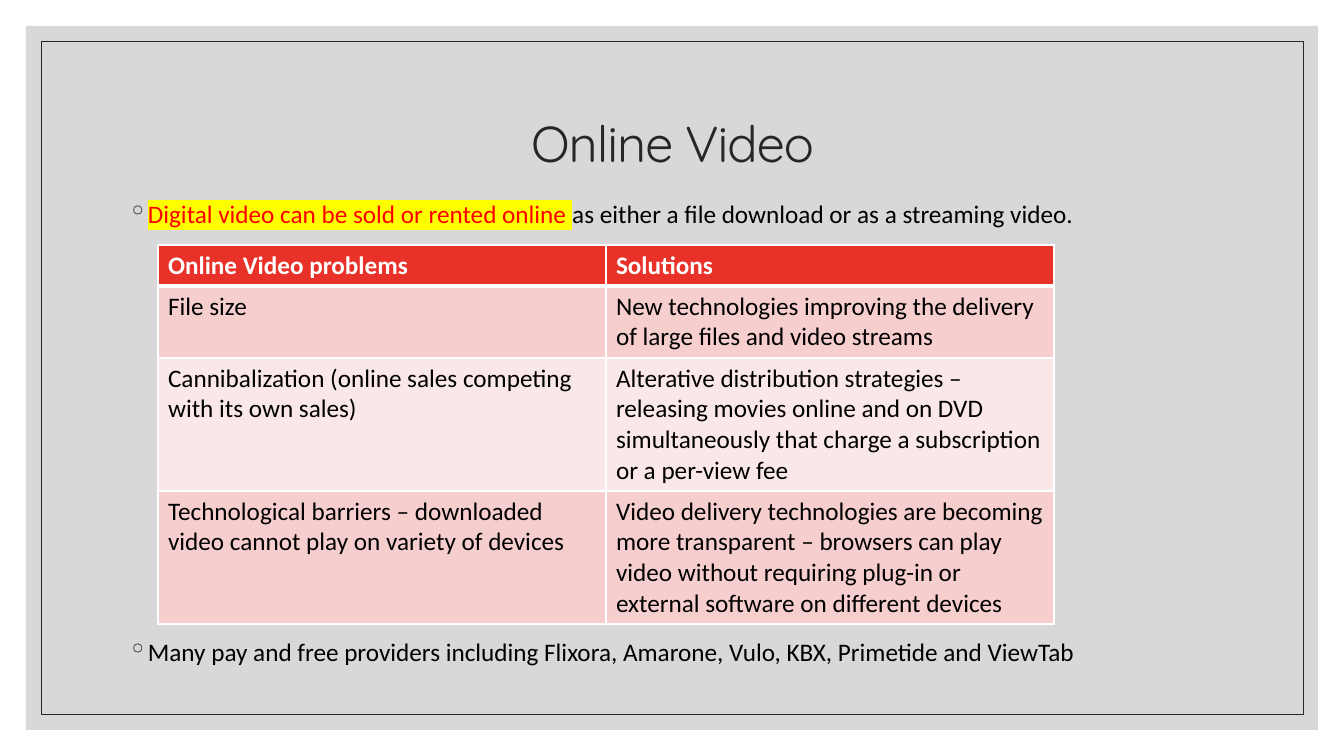
from lxml import etree
from pptx import Presentation, util as u
from pptx.dml.color import RGBColor
from pptx.enum import shapes, text
from pptx.oxml import ns

EMU_PER_PX = 914400 / 100.8
INK, BLACK, WHITE = "262626", "000000", "FFFFFF"
HEADER, BAND_DARK, BAND_LIGHT = "E73129", "F6CECD", "FAE8E8"

PROBLEMS = [
    ("Online Video problems", "Solutions"),
    ("File size",
     "New technologies improving the delivery of large files and video streams"),
    ("Cannibalization (online sales competing with its own sales)",
     "Alterative distribution strategies – releasing movies online and on DVD "
     "simultaneously that charge a subscription or a per-view fee"),
    ("Technological barriers – downloaded video cannot play on variety of devices",
     "Video delivery technologies are becoming more transparent – browsers can play "
     "video without requiring plug-in or external software on different devices"),
]
ROW_HEIGHTS = [41, 72, 133, 133]


def px(length):
    return u.Emu(round(length * EMU_PER_PX))


def rgb(color):
    return RGBColor.from_string(color)


def color_element(tag, color):
    element = etree.Element(ns.qn(tag))
    etree.SubElement(element, ns.qn("a:srgbClr"), val=color)
    return element


def add_run(paragraph, words, size=18, font="Calibri", color=BLACK, bold=False,
            highlight=None, spacing=0):
    run = paragraph.add_run()
    run.text = words
    run.font.size, run.font.name, run.font.bold = u.Pt(size), font, bold
    run.font.color.rgb = rgb(color)
    properties = run._r.get_or_add_rPr()
    if highlight:
        fill = properties.find(ns.qn("a:solidFill"))
        fill.addnext(color_element("a:highlight", highlight))
    if spacing:
        properties.set("spc", str(spacing))


def add_panel(slide, box, fill=None, alpha=100, line=None):
    panel = slide.shapes.add_shape(shapes.MSO_SHAPE.RECTANGLE, *map(px, box))
    panel.shadow.inherit = False
    if fill:
        panel.fill.solid()
        panel.fill.fore_color.rgb = rgb(fill)
        shade = panel._element.spPr.find(".//" + ns.qn("a:srgbClr"))
        etree.SubElement(shade, ns.qn("a:alpha"), val=str(alpha * 1000))
    else:
        panel.fill.background()
    if line:
        panel.line.color.rgb = rgb(line)
        panel.line.width = u.Pt(0.5)
    else:
        panel.line.fill.background()


def add_paragraph_box(slide, box, anchor=text.MSO_ANCHOR.TOP):
    frame = slide.shapes.add_textbox(*map(px, box)).text_frame
    frame.word_wrap = True
    frame.vertical_anchor = anchor
    paragraph = frame.paragraphs[0]
    paragraph.line_spacing = 0.9
    return paragraph


def add_bullet(slide, top):
    paragraph = add_paragraph_box(slide, (118, top, 1109, 38))
    properties = paragraph._p.get_or_add_pPr()
    properties.set("marL", str(px(20)))
    properties.set("indent", str(px(-20)))
    properties.append(color_element("a:buClr", INK))
    etree.SubElement(properties, ns.qn("a:buChar"), char="◦")
    return paragraph


def set_borders(cell, bottom, top):
    widths = {"a:lnL": 1, "a:lnR": 1, "a:lnT": top, "a:lnB": bottom}
    properties = cell._tc.get_or_add_tcPr()
    for position, (side, width) in enumerate(widths.items()):
        line = etree.Element(ns.qn(side), w=str(u.Pt(width)))
        line.append(color_element("a:solidFill", WHITE))
        properties.insert(position, line)


def add_problem_table(slide, left, top, column_width):
    table = slide.shapes.add_table(
        len(PROBLEMS), 2, px(left), px(top),
        px(2 * column_width), px(sum(ROW_HEIGHTS))).table
    table.horz_banding = False
    for column in table.columns:
        column.width = px(column_width)
    for row, entries in enumerate(PROBLEMS):
        table.rows[row].height = px(ROW_HEIGHTS[row])
        is_header = row == 0
        band = HEADER if is_header else BAND_DARK if row % 2 else BAND_LIGHT
        for column, words in enumerate(entries):
            cell = table.cell(row, column)
            cell.fill.solid()
            cell.fill.fore_color.rgb = rgb(band)
            set_borders(cell, bottom=3 if is_header else 1, top=3 if row == 1 else 1)
            add_run(cell.text_frame.paragraphs[0], words,
                    color=WHITE if is_header else BLACK, bold=is_header)


def main():
    deck = Presentation()
    deck.slide_width, deck.slide_height = px(1344), px(756)
    slide = deck.slides.add_slide(deck.slide_layouts[6])

    # Background panel and thin frame
    add_panel(slide, (26, 26, 1292, 704), fill="BFBFBF", alpha=60)
    add_panel(slide, (41, 41, 1262, 673), line=INK)

    # Title
    title = add_paragraph_box(slide, (118, 71, 1109, 151), text.MSO_ANCHOR.MIDDLE)
    title.alignment = text.PP_ALIGN.CENTER
    add_run(title, "Online Video", size=36, font="Quicksand", color=INK, spacing=-70)

    # Statements above and below the table
    sales = add_bullet(slide, 197)
    add_run(sales, "Digital video can be sold or rented online ",
            color="FF0000", highlight="FFFF00")
    add_run(sales, "as either a file download or as a streaming video.")
    providers = add_bullet(slide, 635)
    add_run(providers, "Many pay and free providers including Flixora, Amarone, "
                       "Vulo, KBX, Primetide and ViewTab")

    # Problems and solutions
    add_problem_table(slide, left=158, top=245, column_width=448)

    deck.save("out.pptx")


if __name__ == "__main__":
    main()
